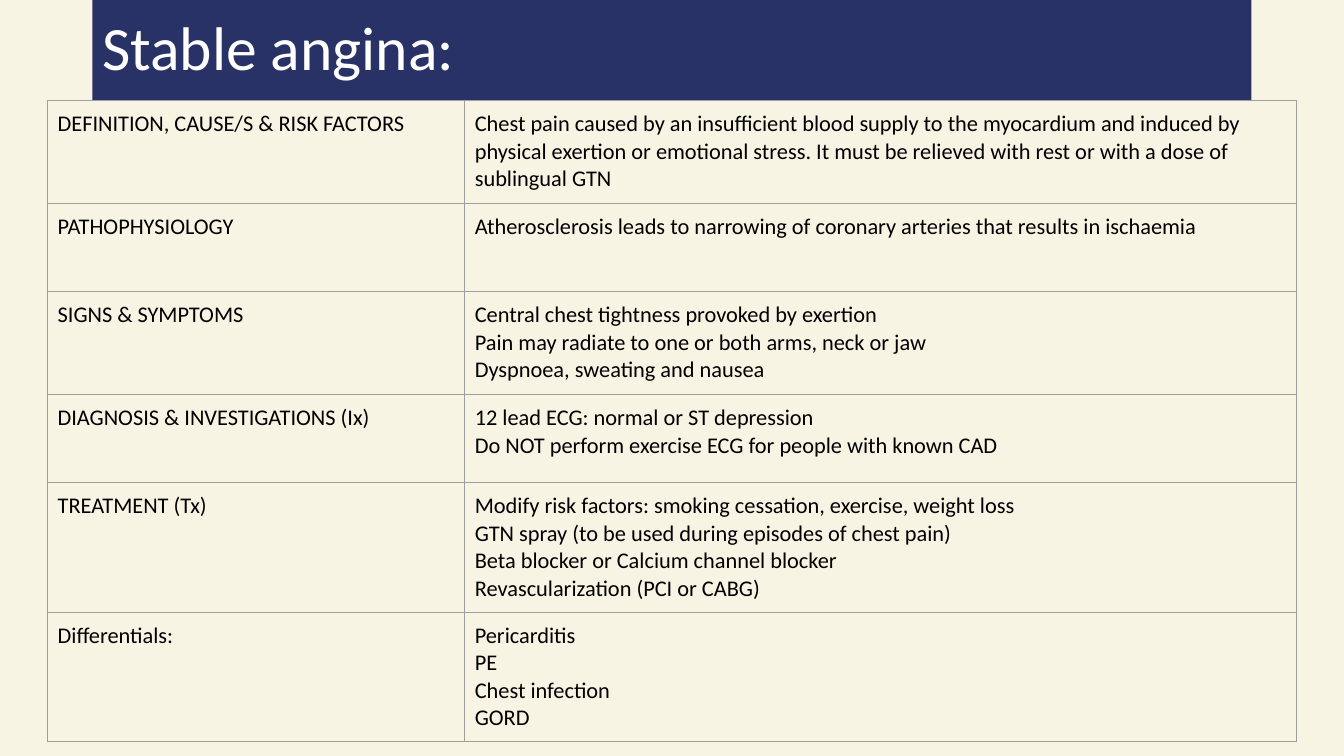
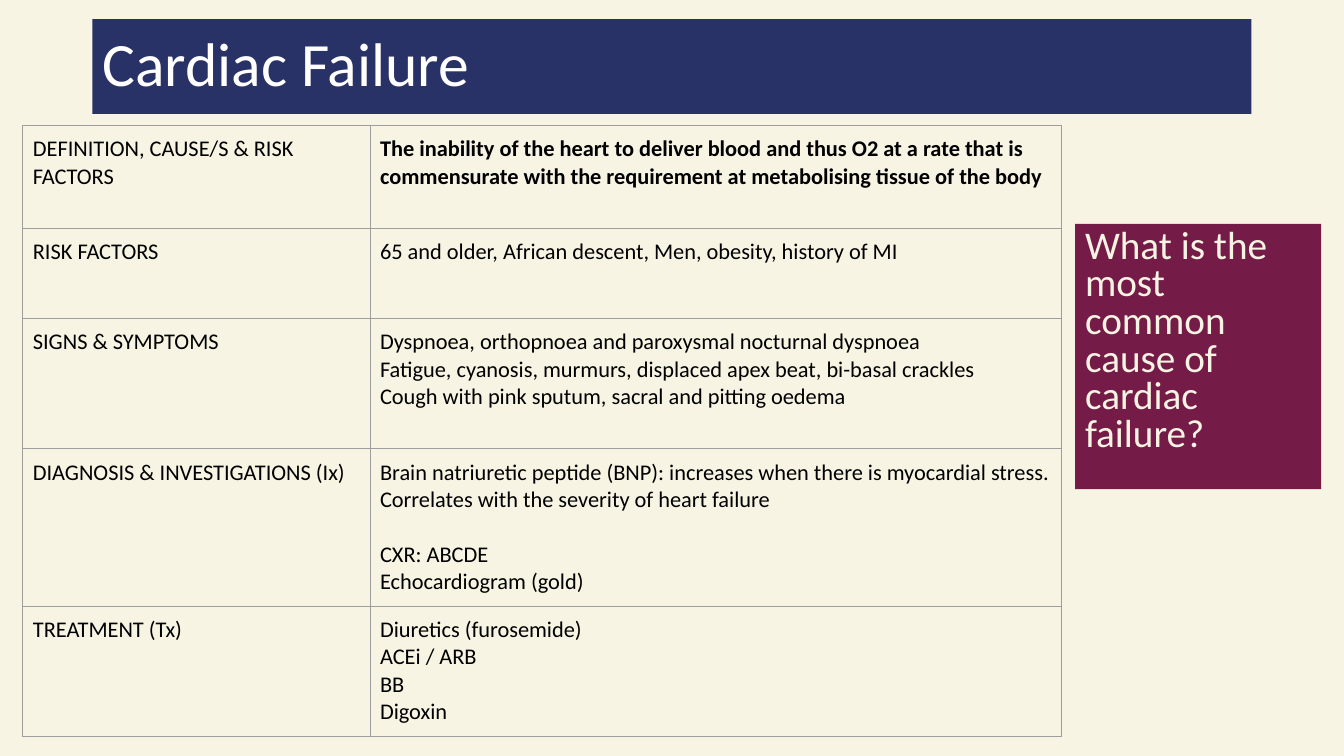
from dataclasses import dataclass

from lxml.etree import SubElement
from pptx import Presentation
from pptx.dml.color import RGBColor
from pptx.enum.shapes import MSO_SHAPE
from pptx.enum.text import MSO_ANCHOR, PP_ALIGN
from pptx.oxml.ns import qn
from pptx.util import Pt


@dataclass(frozen=True)
class Theme:
    """Colours, type sizes and measures shared by the slides."""
    cream: str = "F8F4E4"
    navy: str = "293267"
    plum: str = "741B47"
    white: str = "FFFFFF"
    black: str = "000000"
    rule: str = "9E9E9E"
    font: str = "Calibri"
    title_size: float = 44
    question_size: float = 28
    table_size: float = 16
    rule_width: float = 0.75
    side_inset: float = 7.2
    banner_inset: float = 3.6
    banner_left: float = 66
    banner_width: float = 828


THEME = Theme()


@dataclass(frozen=True)
class Line:
    """One paragraph of a table cell."""
    text: str
    bold: bool = False
    gap_before: float = 0


@dataclass(frozen=True)
class Row:
    """One topic of a condition table."""
    height: float
    topic: str
    details: tuple


ANGINA = [
    Row(73.5, "DEFINITION, CAUSE/S & RISK FACTORS", (
        Line("Chest pain caused by an insufficient blood supply to the myocardium and induced by "
             "physical exertion or emotional stress. It must be relieved with rest or with a dose "
             "of sublingual GTN"),)),
    Row(63, "PATHOPHYSIOLOGY", (
        Line("Atherosclerosis leads to narrowing of coronary arteries that results in ischaemia"),)),
    Row(73.5, "SIGNS & SYMPTOMS", (
        Line("Central chest tightness provoked by exertion"),
        Line("Pain may radiate to one or both arms, neck or jaw"),
        Line("Dyspnoea, sweating and nausea"))),
    Row(63, "DIAGNOSIS & INVESTIGATIONS (Ix)", (
        Line("12 lead ECG: normal or ST depression"),
        Line("Do NOT perform exercise ECG for people with known CAD"))),
    Row(92.5, "TREATMENT (Tx)", (
        Line("Modify risk factors: smoking cessation, exercise, weight loss"),
        Line("GTN spray (to be used during episodes of chest pain)"),
        Line("Beta blocker or Calcium channel blocker"),
        Line("Revascularization (PCI or CABG)"))),
    Row(92.5, "Differentials:", (
        Line("Pericarditis"),
        Line("PE"),
        Line("Chest infection"),
        Line("GORD"))),
]

CARDIAC_FAILURE = [
    Row(73.5, "DEFINITION, CAUSE/S & RISK FACTORS", (
        Line("The inability of the heart to deliver blood and thus O2 at a rate that is "
             "commensurate with the requirement at metabolising tissue of the body", bold=True),)),
    Row(64.5, "RISK FACTORS", (
        Line("65 and older, African descent, Men, obesity, history of MI"),)),
    Row(93, "SIGNS & SYMPTOMS", (
        Line("Dyspnoea, orthopnoea and paroxysmal nocturnal dyspnoea"),
        Line("Fatigue, cyanosis, murmurs, displaced apex beat, bi-basal crackles"),
        Line("Cough with pink sputum, sacral and pitting oedema"))),
    Row(112.5, "DIAGNOSIS & INVESTIGATIONS (Ix)", (
        Line("Brain natriuretic peptide (BNP): increases when there is myocardial stress. "
             "Correlates with the severity of heart failure"),
        Line("CXR: ABCDE", gap_before=19.5),
        Line("Echocardiogram (gold)"))),
    Row(93, "TREATMENT (Tx)", (
        Line("Diuretics (furosemide)"),
        Line("ACEi / ARB"),
        Line("BB"),
        Line("Digoxin"))),
]


def style_runs(paragraph, size, colour, bold=False):
    """Apply the shared font to every run of a paragraph."""
    for run in paragraph.runs:
        run.font.name = THEME.font
        run.font.size = Pt(size)
        run.font.bold = bold
        run.font.color.rgb = RGBColor.from_string(colour)


def add_panel(slide, text, box, fill, size, colour, anchor, line_spacing, space_before=0):
    """Add a filled rectangle holding left-aligned text."""
    panel = slide.shapes.add_shape(MSO_SHAPE.RECTANGLE, *map(Pt, box))
    panel.shadow.inherit = False
    panel.fill.solid()
    panel.fill.fore_color.rgb = RGBColor.from_string(fill)
    panel.line.fill.background()
    frame = panel.text_frame
    frame.text = text
    frame.word_wrap = True
    frame.vertical_anchor = anchor
    frame.margin_left = frame.margin_right = Pt(THEME.side_inset)
    frame.margin_top = frame.margin_bottom = Pt(THEME.banner_inset)
    paragraph = frame.paragraphs[0]
    paragraph.alignment = PP_ALIGN.LEFT
    paragraph.line_spacing = line_spacing
    paragraph.space_before = Pt(space_before)
    style_runs(paragraph, size, colour)


def add_title(slide, text, top, height):
    """Add the navy title banner."""
    add_panel(slide, text, (THEME.banner_left, top, THEME.banner_width, height),
              THEME.navy, THEME.title_size, THEME.white, MSO_ANCHOR.MIDDLE, 0.9)


def add_question(slide, text, box):
    """Add a plum question panel."""
    add_panel(slide, text, box, THEME.plum, THEME.question_size, THEME.cream,
              MSO_ANCHOR.TOP, 0.8, space_before=10)


def rule_cell(cell):
    """Draw a thin grey border on all four sides of a cell."""
    properties = cell._tc.get_or_add_tcPr()
    for side in ("lnL", "lnR", "lnT", "lnB"):
        border = SubElement(properties, qn(f"a:{side}"), w=str(Pt(THEME.rule_width)))
        SubElement(SubElement(border, qn("a:solidFill")), qn("a:srgbClr"), val=THEME.rule)


def fill_cell(cell, lines):
    """Write paragraphs into a transparent, ruled cell."""
    rule_cell(cell)
    cell.fill.background()
    cell.margin_left = cell.margin_right = Pt(THEME.side_inset)
    cell.margin_top = cell.margin_bottom = Pt(THEME.side_inset)
    cell.vertical_anchor = MSO_ANCHOR.TOP
    cell.text_frame.text = "\n".join(line.text for line in lines)
    for paragraph, line in zip(cell.text_frame.paragraphs, lines):
        paragraph.space_before = Pt(line.gap_before)
        style_runs(paragraph, THEME.table_size, THEME.black, line.bold)


def add_condition_table(slide, rows, left, top, widths):
    """Add a two-column table of topics and details."""
    height = sum(row.height for row in rows)
    table = slide.shapes.add_table(len(rows), len(widths), Pt(left), Pt(top),
                                   Pt(sum(widths)), Pt(height)).table
    table.first_row = table.horz_banding = False
    for column, width in zip(table.columns, widths):
        column.width = Pt(width)
    for index, row in enumerate(rows):
        table.rows[index].height = Pt(row.height)
        fill_cell(table.cell(index, 0), (Line(row.topic),))
        fill_cell(table.cell(index, 1), row.details)


def main():
    """Build and save the two condition slides."""
    deck = Presentation()
    deck.slide_width, deck.slide_height = Pt(960), Pt(540)
    background = deck.slide_master.background.fill
    background.solid()
    background.fore_color.rgb = RGBColor.from_string(THEME.cream)
    blank = deck.slide_layouts[6]

    angina = deck.slides.add_slide(blank)
    add_title(angina, "Stable angina:", top=0, height=72)
    add_condition_table(angina, ANGINA, left=34, top=71.7, widths=(298, 594))

    failure = deck.slides.add_slide(blank)
    add_title(failure, "Cardiac Failure", top=13.7, height=67.7)
    add_question(failure, "What is the most common cause of cardiac failure?",
                 (768, 160, 175.7, 189.5))
    add_condition_table(failure, CARDIAC_FAILURE, left=16.3, top=89.5, widths=(248, 494))

    deck.save("out.pptx")


if __name__ == "__main__":
    main()
